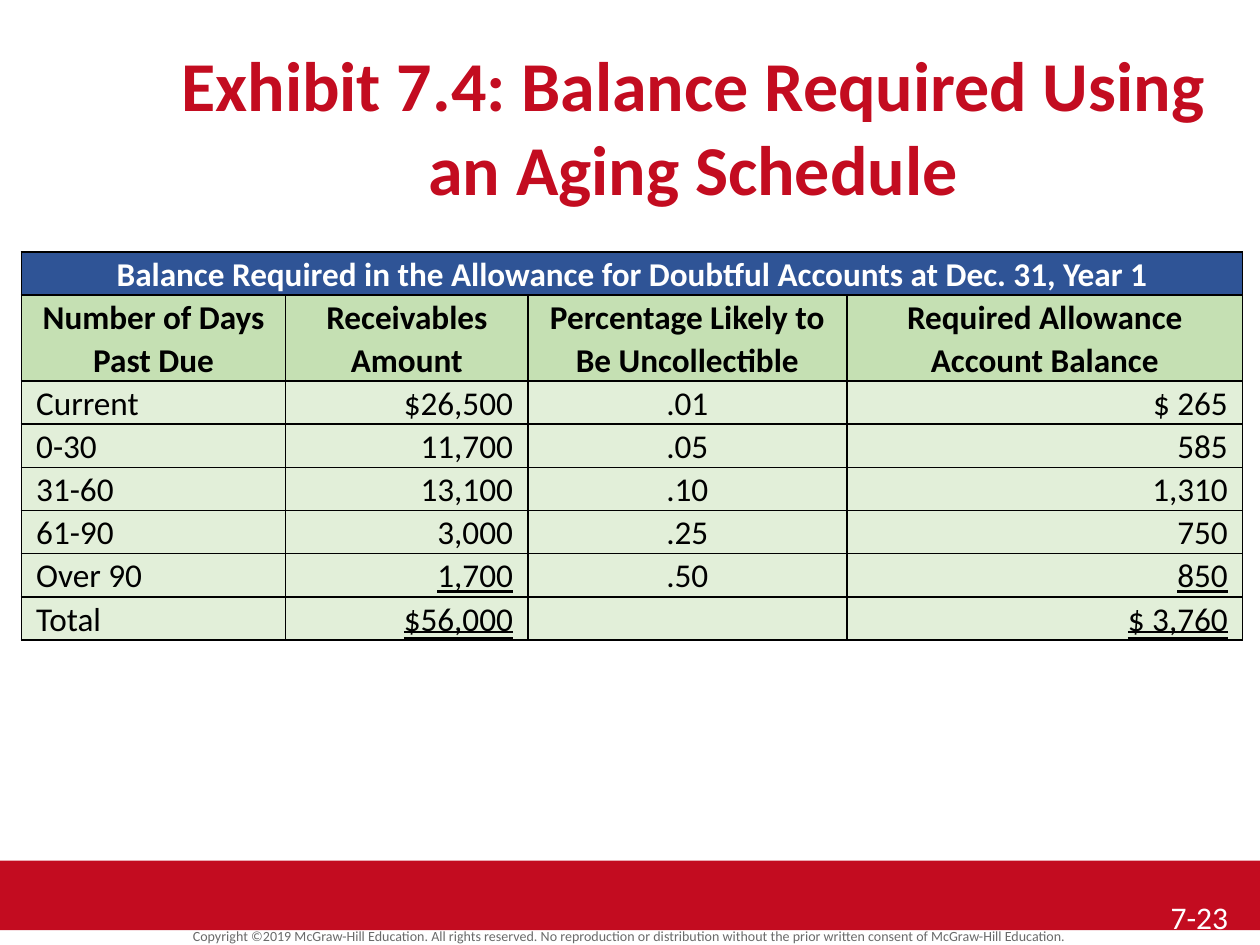
from lxml import etree
from pptx import Presentation
from pptx import util as u
from pptx.dml.color import RGBColor
from pptx.enum import shapes, text
from pptx.oxml import ns

LEFT, MID, RIGHT = text.PP_ALIGN.LEFT, text.PP_ALIGN.CENTER, text.PP_ALIGN.RIGHT
SINGLE, DOUBLE = text.MSO_UNDERLINE.SINGLE_LINE, text.MSO_UNDERLINE.DOUBLE_LINE
RED, WHITE, BLACK, GRAY = "C30C20", "FFFFFF", "000000", "6A6A6A"
BLUE, GREEN, PALE = "2F5496", "C5E0B3", "E2EFD9"

TITLE = "Exhibit 7.4: Balance Required Using an Aging Schedule"
RIGHTS = ("Copyright ©2019 McGraw-Hill Education. All rights reserved. No reproduction or "
          "distribution without the prior written consent of McGraw-Hill Education.")
BANNER = "Balance Required in the Allowance for Doubtful Accounts at Dec. 31, Year 1"
HEADS = ["Number of Days Past Due", "Receivables Amount",
         "Percentage Likely to Be Uncollectible", "Required Allowance Account Balance"]
AGES = [
    ["Current", "$26,500", ".01", "$ 265"],
    ["0-30", "11,700", ".05", "585"],
    ["31-60", "13,100", ".10", "1,310"],
    ["61-90", "3,000", ".25", "750"],
    ["Over 90", "1,700", ".50", "850"],
    ["Total", "$56,000", "", "$ 3,760"],
]
WIDTHS = [5.33, 4.88, 6.43, 7.98]
SIDES = [LEFT, RIGHT, MID, RIGHT]
RULES = {"Over 90": SINGLE, "Total": DOUBLE}


def color(code):
    return RGBColor.from_string(code)


class Deck:
    """Holds the style and the current slide, and draws each kind of element."""

    def __init__(self, font="Calibri"):
        self.font = font
        self.file = Presentation()
        self.file.slide_width, self.file.slide_height = u.Cm(25.4), u.Cm(19.05)
        self.slide = self.file.slides.add_slide(self.file.slide_layouts[6])

    def run(self, para, words, size, ink, bold=False, under=None):
        run = para.add_run()
        run.text = words
        font = run.font
        font.name, font.size, font.bold = self.font, u.Pt(size), bold
        font.color.rgb = color(ink)
        if under:
            font.underline = under

    def band(self, left, top, width, height, fill):
        shape = self.slide.shapes.add_shape(
            shapes.MSO_SHAPE.RECTANGLE, *map(u.Cm, (left, top, width, height)))
        shape.shadow.inherit = False
        shape.fill.solid()
        shape.fill.fore_color.rgb = color(fill)
        shape.line.fill.background()

    def label(self, place, words, size, ink, align=MID, bold=False, inset=(0.25, 0.13), line=None):
        frame = self.slide.shapes.add_textbox(*map(u.Cm, place)).text_frame
        frame.word_wrap = True
        frame.margin_left, frame.margin_top = map(u.Cm, inset)
        para = frame.paragraphs[0]
        para.alignment = align
        if line:
            para.line_spacing = line
        self.run(para, words, size, ink, bold)

    def border(self, cell):
        props = cell._tc.get_or_add_tcPr()
        for side in ("lnL", "lnR", "lnT", "lnB"):
            line = etree.SubElement(props, ns.qn("a:" + side), w=str(u.Pt(1)))
            fill = etree.SubElement(line, ns.qn("a:solidFill"))
            etree.SubElement(fill, ns.qn("a:srgbClr"), val=BLACK)

    def cell(self, cell, words, fill, ink=BLACK, align=MID, bold=False, under=None):
        self.border(cell)
        cell.fill.solid()
        cell.fill.fore_color.rgb = color(fill)
        cell.margin_left = cell.margin_right = u.Cm(0.3)
        cell.margin_top = cell.margin_bottom = u.Cm(0)
        para = cell.text_frame.paragraphs[0]
        para.alignment, para.line_spacing, para.space_after = align, 1.07, u.Pt(8)
        if words:
            self.run(para, words, 19, ink, bold, under)

    def table(self, left, top, widths, heights):
        place = map(u.Cm, (left, top, sum(widths), sum(heights)))
        table = self.slide.shapes.add_table(len(heights), len(widths), *place).table
        table.first_row = table.horz_banding = False
        for col, width in zip(table.columns, widths):
            col.width = u.Cm(width)
        for row, height in zip(table.rows, heights):
            row.height = u.Cm(height)
        return table


def main():
    deck = Deck()
    deck.band(0, 17.35, 25.4, 1.4, RED)
    deck.label((0, 18.64, 25.4, 0.48), RIGHTS, 8, GRAY, line=0.8)
    deck.label((2.54, 0.64, 22.86, 1.7), TITLE, 40, RED, bold=True, inset=(0.25, 0.2))
    deck.label((23.06, 17.98, 2.34, 1.02), "7-23", 18, WHITE, LEFT, inset=(0.54, 0.13))

    table = deck.table(0.43, 5.08, WIDTHS, [0.87, 1.73] + [0.87] * len(AGES))
    table.cell(0, 0).merge(table.cell(0, 3))
    for col, head in enumerate(HEADS):
        deck.cell(table.cell(0, col), "" if col else BANNER, BLUE, WHITE, bold=True)
        deck.cell(table.cell(1, col), head, GREEN, bold=True)
    for row, age in enumerate(AGES, 2):
        for col, (words, side) in enumerate(zip(age, SIDES)):
            under = RULES.get(age[0]) if side == RIGHT else None
            deck.cell(table.cell(row, col), words, PALE, align=side, under=under)
    deck.file.save("out.pptx")


if __name__ == "__main__":
    main()
